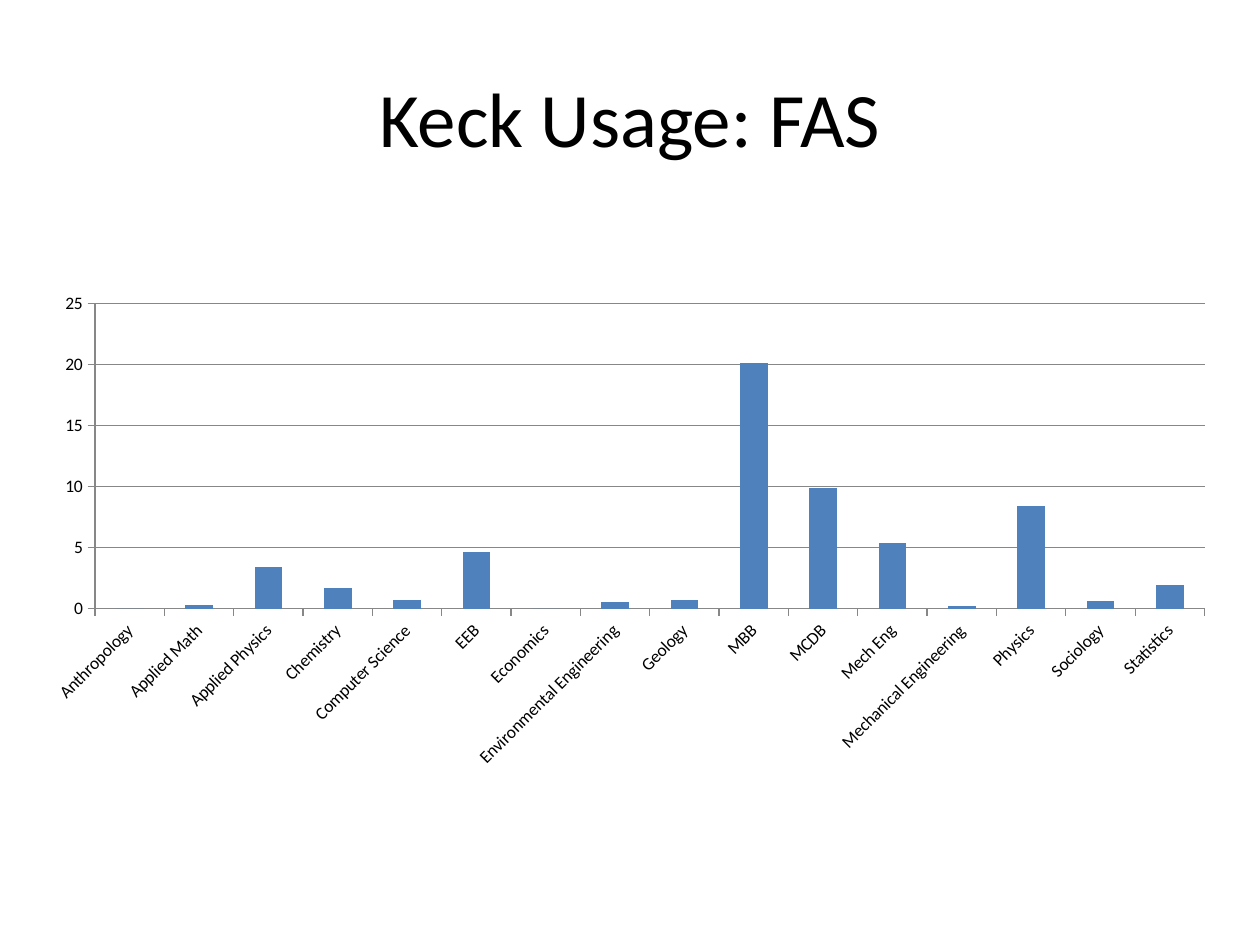
import pptx
import pptx.chart.data
import pptx.dml.color
import pptx.enum.chart
import pptx.enum.text
import pptx.util

Inches = pptx.util.Inches
Pt = pptx.util.Pt
RGBColor = pptx.dml.color.RGBColor

BLACK = RGBColor(0x00, 0x00, 0x00)
GRAY = RGBColor(0x87, 0x87, 0x87)
BLUE = RGBColor(0x4F, 0x81, 0xBD)

USAGE = {
    "Anthropology": 0,
    "Applied Math": 0.3,
    "Applied Physics": 3.4,
    "Chemistry": 1.7,
    "Computer Science": 0.7,
    "EEB": 4.6,
    "Economics": 0,
    "Environmental Engineering": 0.5,
    "Geology": 0.7,
    "MBB": 20.1,
    "MCDB": 9.9,
    "Mech Eng": 5.4,
    "Mechanical Engineering": 0.2,
    "Physics": 8.4,
    "Sociology": 0.6,
    "Statistics": 1.9,
}


class SlideBuilder:
    font_name = "Calibri"
    title_size = Pt(44)
    chart_size = Pt(10)

    def __init__(self, presentation):
        self.slide = presentation.slides.add_slide(presentation.slide_layouts[5])

    def style_font(self, font, size):
        font.name = self.font_name
        font.size = size
        font.color.rgb = BLACK

    def add_title(self, text, left, top, width, height):
        title = self.slide.shapes.title
        title.left, title.top = Inches(left), Inches(top)
        title.width, title.height = Inches(width), Inches(height)
        text_frame = title.text_frame
        text_frame.text = text
        text_frame.vertical_anchor = pptx.enum.text.MSO_ANCHOR.MIDDLE
        paragraph = text_frame.paragraphs[0]
        paragraph.alignment = pptx.enum.text.PP_ALIGN.CENTER
        self.style_font(paragraph.runs[0].font, self.title_size)

    def style_axis(self, axis):
        axis.major_tick_mark = pptx.enum.chart.XL_TICK_MARK.OUTSIDE
        axis.minor_tick_mark = pptx.enum.chart.XL_TICK_MARK.NONE
        axis.format.line.color.rgb = GRAY
        axis.format.line.width = Pt(0.75)
        self.style_font(axis.tick_labels.font, self.chart_size)

    def add_column_chart(self, values, left, top, width, height):
        data = pptx.chart.data.CategoryChartData()
        data.categories = list(values)
        data.add_series("Series 1", list(values.values()))
        chart = self.slide.shapes.add_chart(
            pptx.enum.chart.XL_CHART_TYPE.COLUMN_CLUSTERED,
            Inches(left), Inches(top), Inches(width), Inches(height), data,
        ).chart
        chart.has_legend = False
        chart.has_title = False
        self.style_font(chart.font, self.chart_size)

        plot = chart.plots[0]
        plot.gap_width = 150
        plot.vary_by_categories = False
        fill = plot.series[0].format.fill
        fill.solid()
        fill.fore_color.rgb = BLUE

        for axis in (chart.category_axis, chart.value_axis):
            self.style_axis(axis)
        # Slant the category names by 45 degrees, in 60000ths of a degree.
        label_properties = chart.category_axis._element.txPr.bodyPr
        label_properties.set("rot", str(-45 * 60000))
        label_properties.set("vert", "horz")

        value_axis = chart.value_axis
        value_axis.minimum_scale = 0
        value_axis.maximum_scale = 25
        value_axis.major_unit = 5
        value_axis.has_major_gridlines = True
        gridline = value_axis.major_gridlines.format.line
        gridline.color.rgb = GRAY
        gridline.width = Pt(0.75)


def main():
    presentation = pptx.Presentation()
    presentation.slide_width = Inches(10)
    presentation.slide_height = Inches(7.5)
    builder = SlideBuilder(presentation)
    builder.add_title("Keck Usage: FAS", 0.5, 0.3, 9, 1.25)
    builder.add_column_chart(USAGE, 0.25, 2.25, 9.5, 3.92)
    presentation.save("out.pptx")


if __name__ == "__main__":
    main()
